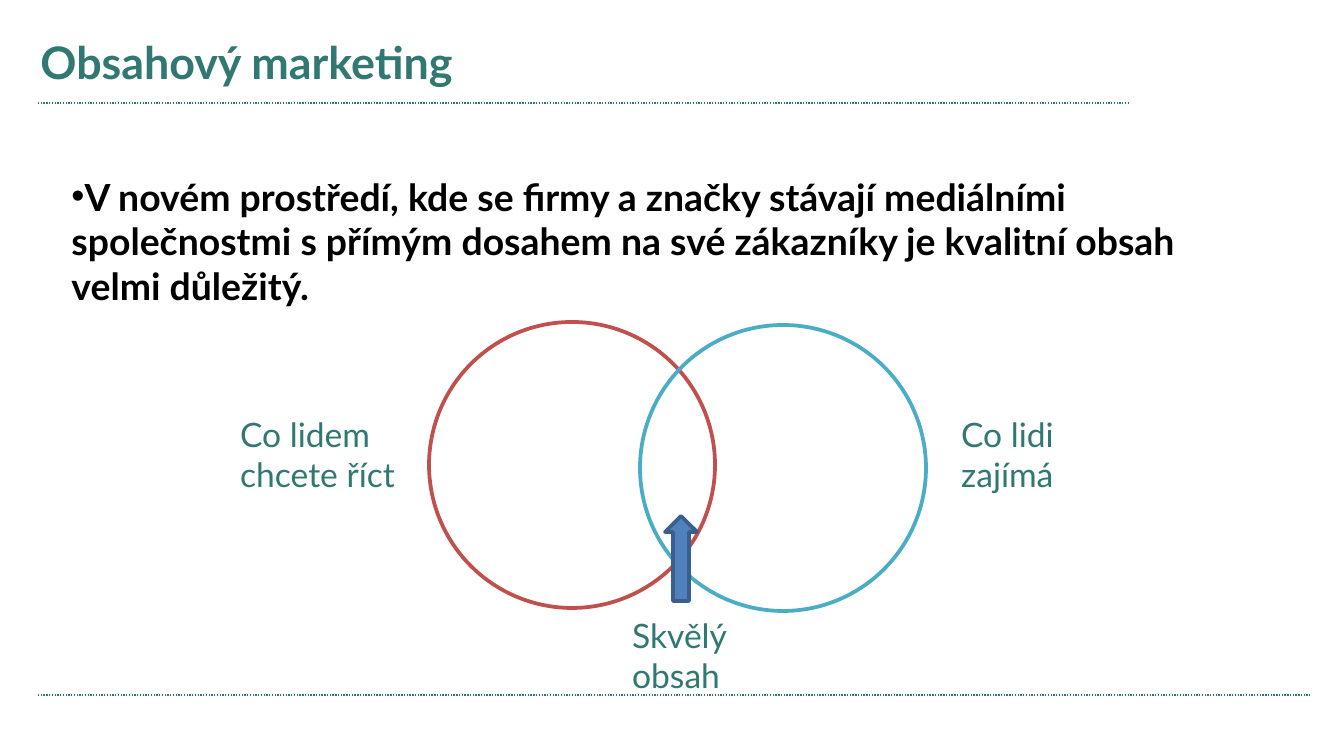
"""Build a slide on content marketing with two overlapping circles."""
from dataclasses import dataclass

from lxml import etree
from pptx import Presentation
from pptx import util as u
from pptx.dml.color import RGBColor
from pptx.enum import dml, shapes, text
from pptx.oxml.ns import qn

EMU_PER_PX = 9144000 / 1344


@dataclass(frozen=True)
class Theme:
    """Colours, font and type sizes of the slide."""
    font: str = "Lato"
    accent: str = "307871"
    body: str = "000000"
    message: str = "C0504D"
    interest: str = "4BACC6"
    arrow: str = "4F81BD"
    arrow_edge: str = "3A5F8C"
    title_size: int = 24
    body_size: int = 20
    label_size: int = 18


THEME = Theme()


def px(length):
    """Turn a length in px into EMU."""
    return u.Emu(round(length * EMU_PER_PX))


def box(left, top, width, height):
    """Turn a px rectangle into EMU lengths."""
    return [px(length) for length in (left, top, width, height)]


def set_font(paragraph, size, color, bold=False):
    """Apply the theme font to a paragraph."""
    font = paragraph.font
    font.name = THEME.font
    font.size = u.Pt(size)
    font.bold = bold
    font.color.rgb = RGBColor.from_string(color)


def fill_placeholder(shape, bounds, wording, size, color):
    """Move a placeholder and give it bold, top-left text."""
    shape.left, shape.top, shape.width, shape.height = box(*bounds)
    frame = shape.text_frame
    frame.text = wording
    frame.word_wrap = True
    frame.auto_size = text.MSO_AUTO_SIZE.NONE
    frame.vertical_anchor = text.MSO_ANCHOR.TOP
    paragraph = frame.paragraphs[0]
    paragraph.alignment = text.PP_ALIGN.LEFT
    paragraph.space_before = u.Pt(0)
    set_font(paragraph, size, color, bold=True)
    return paragraph


def add_bullet(paragraph):
    """Put a bullet directly before the text, without a hanging indent."""
    properties = paragraph._p.get_or_add_pPr()
    properties.set("marL", "0")
    properties.set("indent", "0")
    bullet = etree.Element(qn("a:buChar"), char="•")
    properties.insert_element_before(bullet, "a:tabLst", "a:defRPr", "a:extLst")


def add_rule(slide, left, right, y):
    """Add a dotted horizontal line."""
    rule = slide.shapes.add_connector(
        shapes.MSO_CONNECTOR.STRAIGHT, px(left), px(y), px(right), px(y))
    rule.line.color.rgb = RGBColor.from_string(THEME.accent)
    rule.line.width = u.Pt(0.75)
    rule.line.dash_style = dml.MSO_LINE.ROUND_DOT
    etree.SubElement(rule._element.spPr, qn("a:effectLst"))


def add_outlined(slide, kind, bounds, edge, fill=None):
    """Add a preset shape with a 2 pt outline and an optional fill."""
    shape = slide.shapes.add_shape(kind, *box(*bounds))
    shape.shadow.inherit = False
    shape.line.color.rgb = RGBColor.from_string(edge)
    shape.line.width = u.Pt(2)
    if fill:
        shape.fill.solid()
        shape.fill.fore_color.rgb = RGBColor.from_string(fill)
    else:
        shape.fill.background()


def add_label(slide, left, top, wording):
    """Add a two-line label."""
    frame = slide.shapes.add_textbox(*box(left, top, 211, 95)).text_frame
    frame.word_wrap = True
    frame.auto_size = text.MSO_AUTO_SIZE.SHAPE_TO_FIT_TEXT
    frame.text = wording
    set_font(frame.paragraphs[0], THEME.label_size, THEME.accent)


def main():
    """Build and save the presentation."""
    presentation = Presentation()
    presentation.slide_width, presentation.slide_height = px(1344), px(756)
    slide = presentation.slides.add_slide(presentation.slide_layouts[1])

    fill_placeholder(slide.shapes.title, (27, 28, 857, 75), "Obsahový marketing",
                     THEME.title_size, THEME.accent)
    statement = fill_placeholder(
        slide.placeholders[1], (58, 167, 1218, 445),
        "V novém prostředí, kde se firmy a značky stávají mediálními společnostmi "
        "s přímým dosahem na své zákazníky je kvalitní obsah velmi důležitý.",
        THEME.body_size, THEME.body)
    add_bullet(statement)

    add_rule(slide, 38, 1128, 103)
    add_rule(slide, 38, 1310, 695)

    oval = shapes.MSO_SHAPE.OVAL
    add_outlined(slide, oval, (429, 322, 286, 286), THEME.message)
    add_outlined(slide, oval, (640, 325, 286, 286), THEME.interest)

    add_label(slide, 227, 407, "Co lidem chcete říct")
    add_label(slide, 948, 407, "Co lidi zajímá")
    add_label(slide, 619, 608, "Skvělý obsah")
    add_outlined(slide, shapes.MSO_SHAPE.UP_ARROW, (665, 516, 32, 85),
                 THEME.arrow_edge, THEME.arrow)

    presentation.save("out.pptx")


if __name__ == "__main__":
    main()
